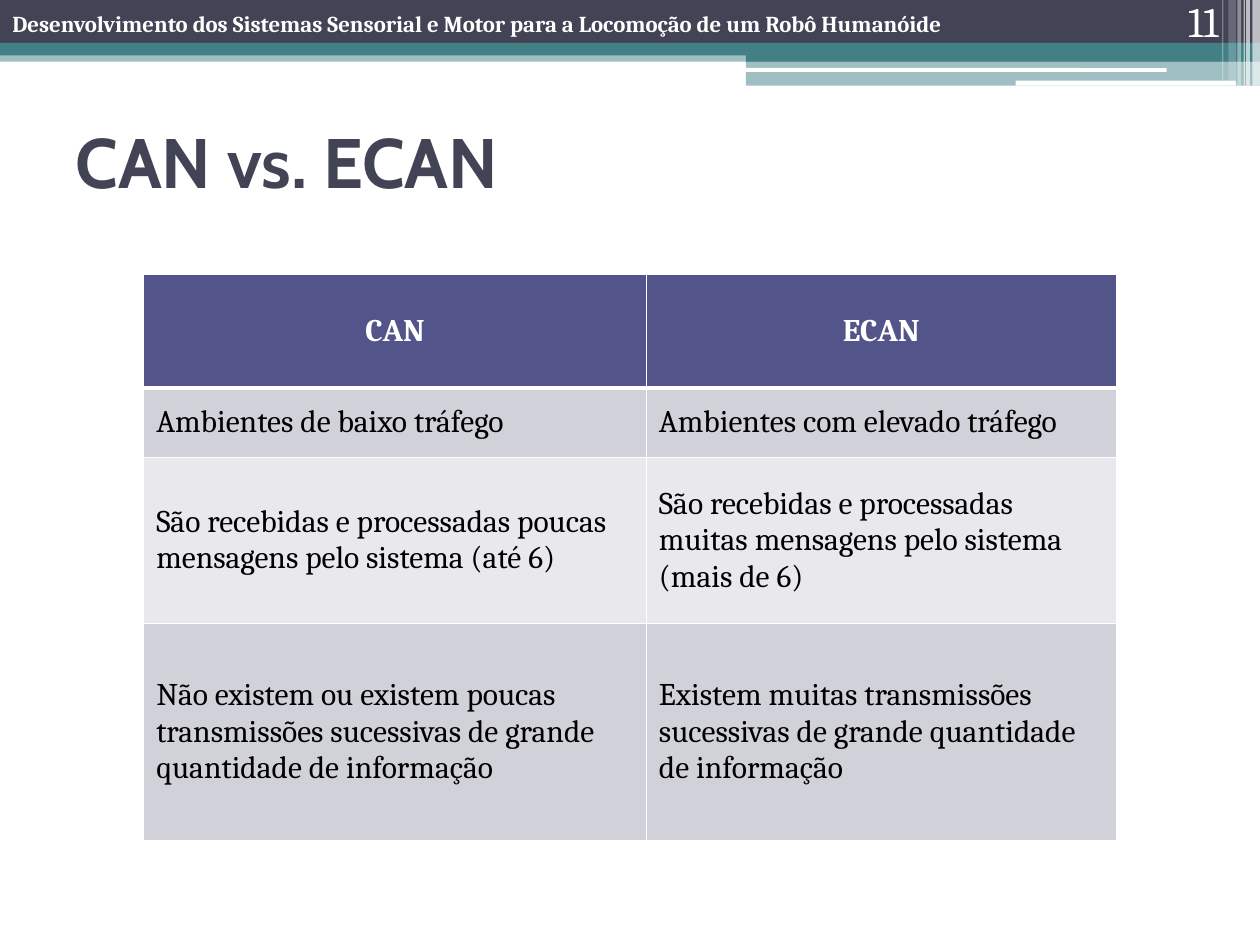
from lxml import etree
from pptx import Presentation
from pptx import util as u
from pptx.dml.color import RGBColor
from pptx.enum import shapes, text
from pptx.oxml.ns import qn

I = u.Inches
KIND = shapes.MSO_SHAPE
ALIGN = text.PP_ALIGN
MID = text.MSO_ANCHOR.MIDDLE
WHITE, DARK, TEAL = "FFFFFF", "424456", "438086"

BARS = [
    (0, 0.4, 10, 0.09, TEAL, 50),
    (0, 0, 10, 0.34, DARK, 100),
    (0, 0.34, 10, 0.1, TEAL, 100),
    (5.92, 0.39, 4.08, 0.1, TEAL, 100),
    (5.92, 0.48, 4.08, 0.2, TEAL, 50),
]
PILLS = [(5.91, 0.54, 3.35, 0.03), (8.06, 0.64, 1.75, 0.04)]
STRIPES = [
    (9.94, 0.06, 0.68, 65),
    (9.89, 0.03, 0.68, 65),
    (9.87, 0.01, 0.68, 60),
    (9.82, 0.03, 0.68, 40),
    (9.75, 0.06, 0.64, 20),
    (9.7, 0.01, 0.64, 30),
]
ROWS = [
    ("CAN", "ECAN"),
    ("Ambientes de baixo tráfego", "Ambientes com elevado tráfego"),
    ("São recebidas e processadas poucas mensagens pelo sistema (até 6)",
     "São recebidas e processadas muitas mensagens pelo sistema (mais de 6)"),
    ("Não existem ou existem poucas transmissões sucessivas de grande quantidade de informação",
     "Existem muitas transmissões sucessivas de grande quantidade de informação"),
]


def paint(fill, tone, alpha=100):
    fill.solid()
    fill.fore_color.rgb = RGBColor.from_string(tone)
    if alpha < 100:
        node = next(fill._xPr.iter(qn("a:srgbClr")))
        etree.SubElement(node, qn("a:alpha")).set("val", str(alpha * 1000))


def style(par, size, tone, bold=False, face="Cambria", align=ALIGN.LEFT):
    font = par.font
    font.name, font.size, font.bold = face, u.Pt(size), bold
    font.color.rgb = RGBColor.from_string(tone)
    par.alignment = align


def block(slide, box, tone, alpha=100, kind=KIND.RECTANGLE):
    shape = slide.shapes.add_shape(kind, *map(I, box))
    shape.shadow.inherit = False
    paint(shape.fill, tone, alpha)
    shape.line.fill.background()


def label(slide, box, words, size, bold=False, align=ALIGN.LEFT, anchor=text.MSO_ANCHOR.TOP):
    frame = slide.shapes.add_textbox(*map(I, box)).text_frame
    frame.word_wrap = True
    frame.vertical_anchor = anchor
    frame.text = words
    style(frame.paragraphs[0], size, WHITE, bold, align=align)


def banner(slide, left, top):
    for x, y, w, h, tone, alpha in BARS:
        block(slide, (left + x, top + y, w, h), tone, alpha)
    for x, y, w, h in PILLS:
        block(slide, (left + x, top + y, w, h), WHITE, kind=KIND.ROUNDED_RECTANGLE)
    for x, w, h, alpha in STRIPES:
        block(slide, (left + x, top, w, h), WHITE, alpha)
    label(slide, (left + 8.94, top + 0.05, 0.83, 0.36), "11", 24,
          align=ALIGN.RIGHT, anchor=text.MSO_ANCHOR.BOTTOM)
    label(slide, (left, top + 0.03, 9.49, 0.41),
          "Desenvolvimento dos Sistemas Sensorial e Motor para a Locomoção de um Robô Humanóide",
          13, bold=True)


def heading(slide, left, top, width, height):
    title = slide.shapes.title
    title.left, title.top, title.width, title.height = map(I, (left, top, width, height))
    frame = title.text_frame
    frame.text = "CAN vs. ECAN"
    frame.vertical_anchor = MID
    style(frame.paragraphs[0], 40, DARK, True, "Cabin")


def edge(cell, sides):
    props = cell._tc.get_or_add_tcPr()
    for spot, (side, width) in enumerate(sides.items()):
        line = etree.Element(qn("a:ln" + side), w=str(u.Pt(width)))
        fill = etree.SubElement(line, qn("a:solidFill"))
        etree.SubElement(fill, qn("a:srgbClr")).set("val", WHITE)
        props.insert(spot, line)


def grid(slide, left, top, width, height):
    table = slide.shapes.add_table(len(ROWS), 2, *map(I, (left, top, width, height))).table
    for col, size in zip(table.columns, (3.99, 3.73)):
        col.width = I(size)
    for row, size in zip(table.rows, (0.9, 0.55, 1.32, 1.72)):
        row.height = I(size)
    for r, words in enumerate(ROWS):
        head = r == 0
        for c, word in enumerate(words):
            cell = table.cell(r, c)
            cell.text = word
            cell.vertical_anchor = MID
            paint(cell.fill, "53548A" if head else ("E9E9ED", "D1D1DA")[r % 2])
            edge(cell, {"L": 1, "R": 1, "T": 3 if r == 1 else 1, "B": 3 if head else 1})
            style(cell.text_frame.paragraphs[0], 18, WHITE if head else "000000", head,
                  align=ALIGN.CENTER if head else ALIGN.LEFT)


def main():
    deck = Presentation()
    deck.slide_width, deck.slide_height = I(10), I(7.5)
    slide = deck.slides.add_slide(deck.slide_layouts[5])
    banner(slide, 0, 0)
    heading(slide, 0.5, 0.69, 9, 1.17)
    grid(slide, 1.14, 2.18, 7.72, 4.49)
    deck.save("out.pptx")


if __name__ == "__main__":
    main()
